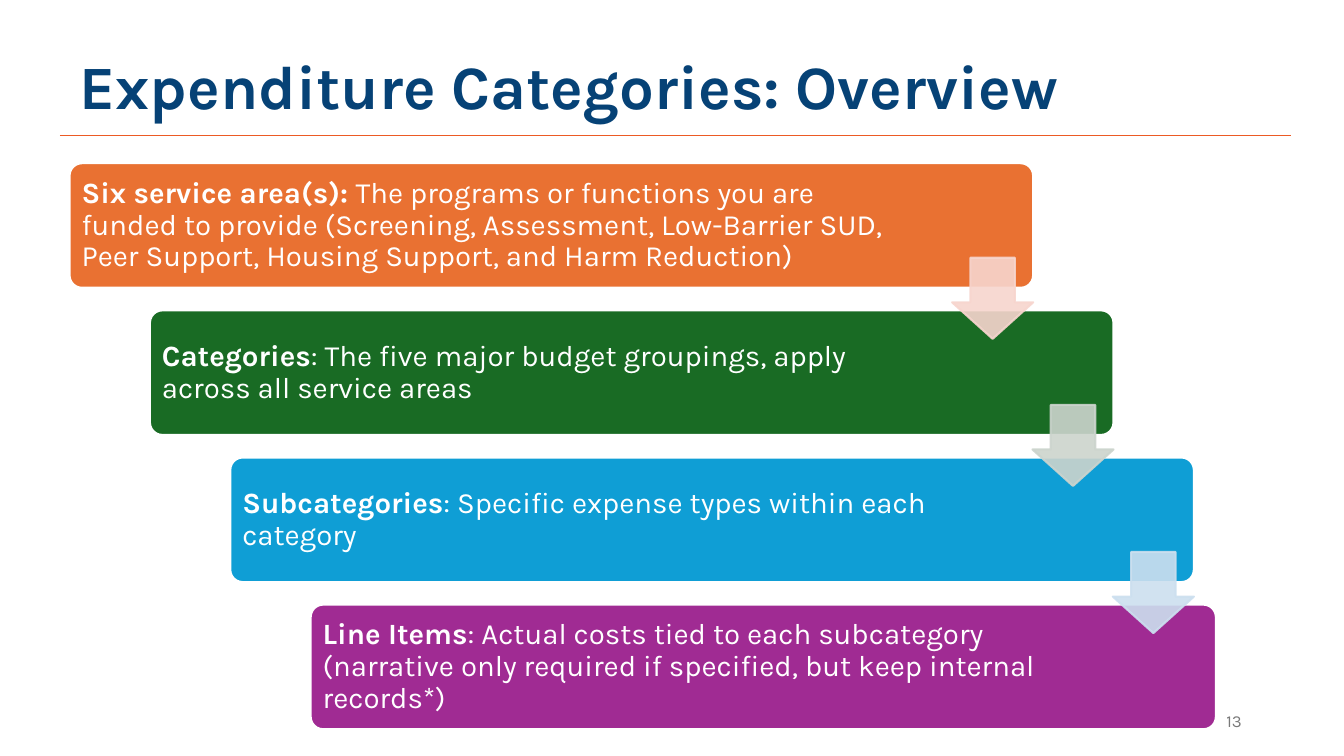
from dataclasses import dataclass

from lxml import etree
from pptx import Presentation
from pptx.dml.color import RGBColor
from pptx.enum.shapes import MSO_CONNECTOR, MSO_SHAPE
from pptx.enum.text import MSO_ANCHOR, MSO_AUTO_SIZE, PP_ALIGN
from pptx.oxml.ns import qn
from pptx.util import Pt

ROUNDED = MSO_SHAPE.ROUNDED_RECTANGLE
DOWN_ARROW = MSO_SHAPE.DOWN_ARROW
STRAIGHT = MSO_CONNECTOR.STRAIGHT
MIDDLE = MSO_ANCHOR.MIDDLE
NO_FIT = MSO_AUTO_SIZE.NONE
LEFT, RIGHT = PP_ALIGN.LEFT, PP_ALIGN.RIGHT

FONT = "Karla"
WHITE = "FFFFFF"

# Staircase geometry in points
FIRST_LEFT, FIRST_TOP = 49.7, 116.6
STEP_X, STEP_Y = 57.4, 105.1
BAR_HEIGHT = 89
ARROW_SIZE, ARROW_DROP = 57.9, 67.5


@dataclass
class Level:
    term: str
    meaning: str
    color: str
    width: float = 688.3
    right_inset: float = 122
    arrow_color: str = ""


LEVELS = [
    Level("Six service area(s): ",
          "The programs or functions you are funded to provide (Screening, "
          "Assessment, Low-Barrier SUD, Peer Support, Housing Support, and "
          "Harm Reduction)",
          "E97132", right_inset=104.7, arrow_color="F7D5CE"),
    Level("Categories",
          ": The five major budget groupings, apply across all service areas",
          "196B24", arrow_color="CCD4CD"),
    Level("Subcategories",
          ": Specific expense types within each category",
          "0F9ED5", arrow_color="CCDFEF"),
    Level("Line Items",
          ": Actual costs tied to each subcategory (narrative only required "
          "if specified, but keep internal records*)",
          "A02B93", width=646.6),
]


def rgb(value: str) -> RGBColor:
    return RGBColor.from_string(value)


def format_paragraph(para, size: float, color: str, align=LEFT) -> None:
    para.alignment = align
    para.font.name = FONT
    para.font.size = Pt(size)
    para.font.color.rgb = rgb(color)


def add_block(page, kind, left: float, top: float, width: float,
              height: float, color: str, outline: str):
    block = page.shapes.add_shape(kind, Pt(left), Pt(top), Pt(width), Pt(height))
    block.shadow.inherit = False
    block.fill.solid()
    block.fill.fore_color.rgb = rgb(color)
    block.line.color.rgb = rgb(outline)
    block.line.width = Pt(1.5)
    return block


def add_bar(page, level: Level, left: float, top: float) -> None:
    bar = add_block(page, ROUNDED, left, top, level.width, BAR_HEIGHT,
                    level.color, WHITE)
    bar.adjustments[0] = 0.1
    frame = bar.text_frame
    frame.word_wrap = True
    frame.vertical_anchor = MIDDLE
    frame.margin_left = frame.margin_top = frame.margin_bottom = Pt(6)
    frame.margin_right = Pt(level.right_inset)
    para = frame.paragraphs[0]
    format_paragraph(para, 21, WHITE)
    para.line_spacing = 0.9
    for words, bold in ((level.term, True), (level.meaning, False)):
        span = para.add_run()
        span.text = words
        span.font.bold = bold


def add_arrow(page, color: str, left: float, top: float) -> None:
    arrow = add_block(page, DOWN_ARROW, left, top, ARROW_SIZE, ARROW_SIZE,
                      color, color)
    arrow.adjustments[0] = 0.55
    arrow.adjustments[1] = 0.45
    # 90% opacity for fill and line
    for tint in arrow._element.spPr.iter(qn("a:srgbClr")):
        etree.SubElement(tint, qn("a:alpha"), val="90000")


def add_title(page) -> None:
    title = page.shapes.title
    title.left, title.top = Pt(49.7), Pt(31.7)
    title.width, title.height = Pt(787.7), Pt(64.8)
    frame = title.text_frame
    frame.text = "Expenditure Categories: Overview"
    frame.auto_size = NO_FIT
    frame.vertical_anchor = MIDDLE
    para = frame.paragraphs[0]
    format_paragraph(para, 44, "064276")
    para.font.bold = True
    para.line_spacing = 0.9


def add_rule(page) -> None:
    rule = page.shapes.add_connector(STRAIGHT, Pt(42.8), Pt(96.6), Pt(922.3), Pt(96.6))
    rule.line.color.rgb = rgb("EC5A24")
    rule.line.width = Pt(1)
    etree.SubElement(rule._element.spPr, qn("a:effectLst"))


def add_page_number(page) -> None:
    box = page.shapes.add_textbox(Pt(678.2), Pt(500.4), Pt(216), Pt(28.8))
    frame = box.text_frame
    frame.word_wrap = True
    frame.vertical_anchor = MIDDLE
    frame.text = "13"
    format_paragraph(frame.paragraphs[0], 12, "797979", RIGHT)


def main() -> None:
    deck = Presentation()
    deck.slide_width, deck.slide_height = Pt(960), Pt(540)
    page = deck.slides.add_slide(deck.slide_layouts[5])

    # Heading and footer
    add_rule(page)
    add_title(page)
    add_page_number(page)

    # Bars first, so that the arrows lie over them
    places = [(level, FIRST_LEFT + i * STEP_X, FIRST_TOP + i * STEP_Y)
              for i, level in enumerate(LEVELS)]
    for level, left, top in places:
        add_bar(page, level, left, top)
    for level, left, top in places:
        if level.arrow_color:
            add_arrow(page, level.arrow_color,
                      left + level.width - ARROW_SIZE, top + ARROW_DROP)

    deck.save("out.pptx")


if __name__ == "__main__":
    main()
